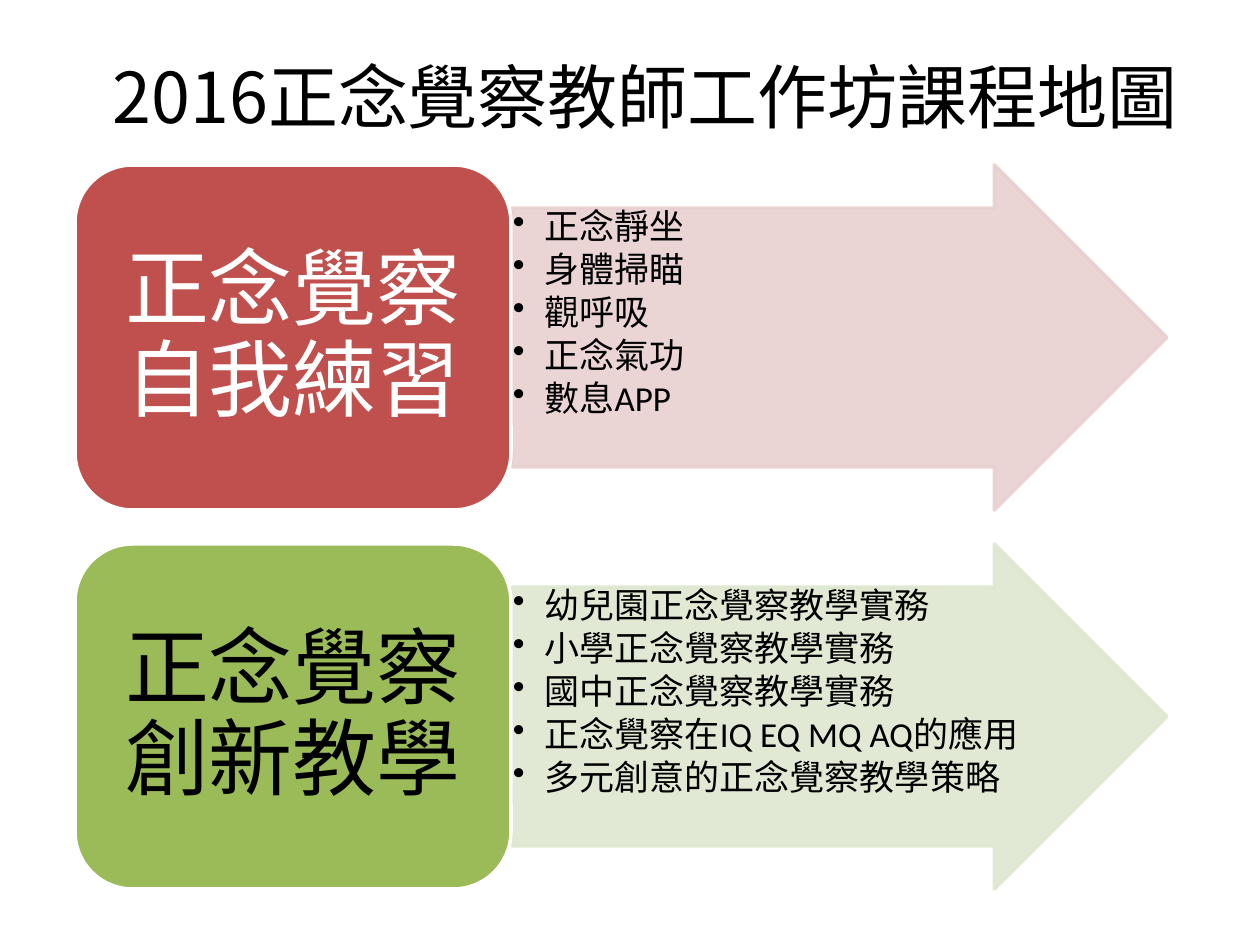
import pptx
import pptx.util
import pptx.dml.color
import pptx.enum.shapes
import pptx.enum.text
import pptx.oxml
import pptx.oxml.ns
import lxml.etree

SCALE = 914400 / 126  # EMU per px
COLORS = {
    "black": "000000", "white": "FFFFFF",
    "red": "C0504D", "pale red": "E8D0D0",
    "green": "9BBB59", "pale green": "DEE7D1",
}
CJK_FONT = "Noto Sans CJK SC"


def px(*lengths):
    return [pptx.util.Emu(round(length * SCALE)) for length in lengths]


def format_text(paragraph, size, latin_font, color):
    for run in paragraph.runs:
        run.font.size = pptx.util.Pt(size)
        run.font.name = latin_font
        run.font.color.rgb = pptx.dml.color.RGBColor.from_string(COLORS[color])
        east_asian = lxml.etree.SubElement(run.font._element, pptx.oxml.ns.qn("a:ea"))
        east_asian.set("typeface", CJK_FONT)


presentation = pptx.Presentation()
presentation.slide_width, presentation.slide_height = px(1260, 945)
slide = presentation.slides.add_slide(presentation.slide_layouts[6])

# Title
title = slide.shapes.add_textbox(*px(25, 43, 1240, 101))
title.text_frame.word_wrap = True
title.text_frame.vertical_anchor = pptx.enum.text.MSO_ANCHOR.BOTTOM
title.text_frame.text = "2016正念覺察教師工作坊課程地圖"
paragraph = title.text_frame.paragraphs[0]
paragraph.alignment = pptx.enum.text.PP_ALIGN.CENTER
format_text(paragraph, 40, CJK_FONT, "black")

# Course rows: heading, heading colour, box fill, arrow fill, topics
courses = [
    ("正念覺察自我練習", "white", "red", "pale red",
     ["正念靜坐", "身體掃瞄", "觀呼吸", "正念氣功", "數息APP"]),
    ("正念覺察創新教學", "black", "green", "pale green",
     ["幼兒園正念覺察教學實務", "小學正念覺察教學實務", "國中正念覺察教學實務",
      "正念覺察在IQ EQ MQ AQ的應用", "多元創意的正念覺察教學策略"]),
]
ROW_TOP, ROW_PITCH, ROW_HEIGHT = 165, 379, 345

for row, (heading, heading_color, box_color, arrow_color, topics) in enumerate(courses):
    top = ROW_TOP + row * ROW_PITCH
    arrow = slide.shapes.add_shape(
        pptx.enum.shapes.MSO_SHAPE.RIGHT_ARROW, *px(512, top, 655, ROW_HEIGHT))
    arrow.adjustments[0] = 0.75
    arrow.adjustments[1] = 0.5
    box = slide.shapes.add_shape(
        pptx.enum.shapes.MSO_SHAPE.ROUNDED_RECTANGLE, *px(75, top, 436, ROW_HEIGHT))

    # Fills and outlines
    for shape, fill, line in ((arrow, arrow_color, arrow_color), (box, box_color, "white")):
        shape.shadow.inherit = False
        shape.fill.solid()
        shape.fill.fore_color.rgb = pptx.dml.color.RGBColor.from_string(COLORS[fill])
        shape.line.color.rgb = pptx.dml.color.RGBColor.from_string(COLORS[line])
        shape.line.width = pptx.util.Pt(2)
        shape.text_frame.word_wrap = True

    # The arrow is slightly transparent
    for color in arrow._element.spPr.iter(pptx.oxml.ns.qn("a:srgbClr")):
        lxml.etree.SubElement(color, pptx.oxml.ns.qn("a:alpha")).set("val", "90000")

    # Bulleted topics in the arrow
    frame = arrow.text_frame
    frame.vertical_anchor = pptx.enum.text.MSO_ANCHOR.TOP
    frame.margin_left, frame.margin_top, frame.margin_right, frame.margin_bottom = px(1, 1, 1, 1)
    frame.text = "\n".join(topics)
    for paragraph in frame.paragraphs:
        paragraph.level = 1
        paragraph.alignment = pptx.enum.text.PP_ALIGN.LEFT
        paragraph.line_spacing = 0.9
        paragraph.space_after = pptx.util.Pt(3)
        properties = paragraph._p.get_or_add_pPr()
        properties.set("marL", "228600")
        properties.set("indent", "-228600")
        bullet = lxml.etree.SubElement(properties, pptx.oxml.ns.qn("a:buChar"))
        bullet.set("char", "•")
        format_text(paragraph, 20, "Calibri", "black")

    # Heading in the box
    frame = box.text_frame
    frame.vertical_anchor = pptx.enum.text.MSO_ANCHOR.MIDDLE
    frame.margin_left, frame.margin_top, frame.margin_right, frame.margin_bottom = px(25, 13, 25, 13)
    frame.text = heading
    paragraph = frame.paragraphs[0]
    paragraph.alignment = pptx.enum.text.PP_ALIGN.CENTER
    paragraph.line_spacing = 0.9
    format_text(paragraph, 48, CJK_FONT, heading_color)

presentation.save("out.pptx")
